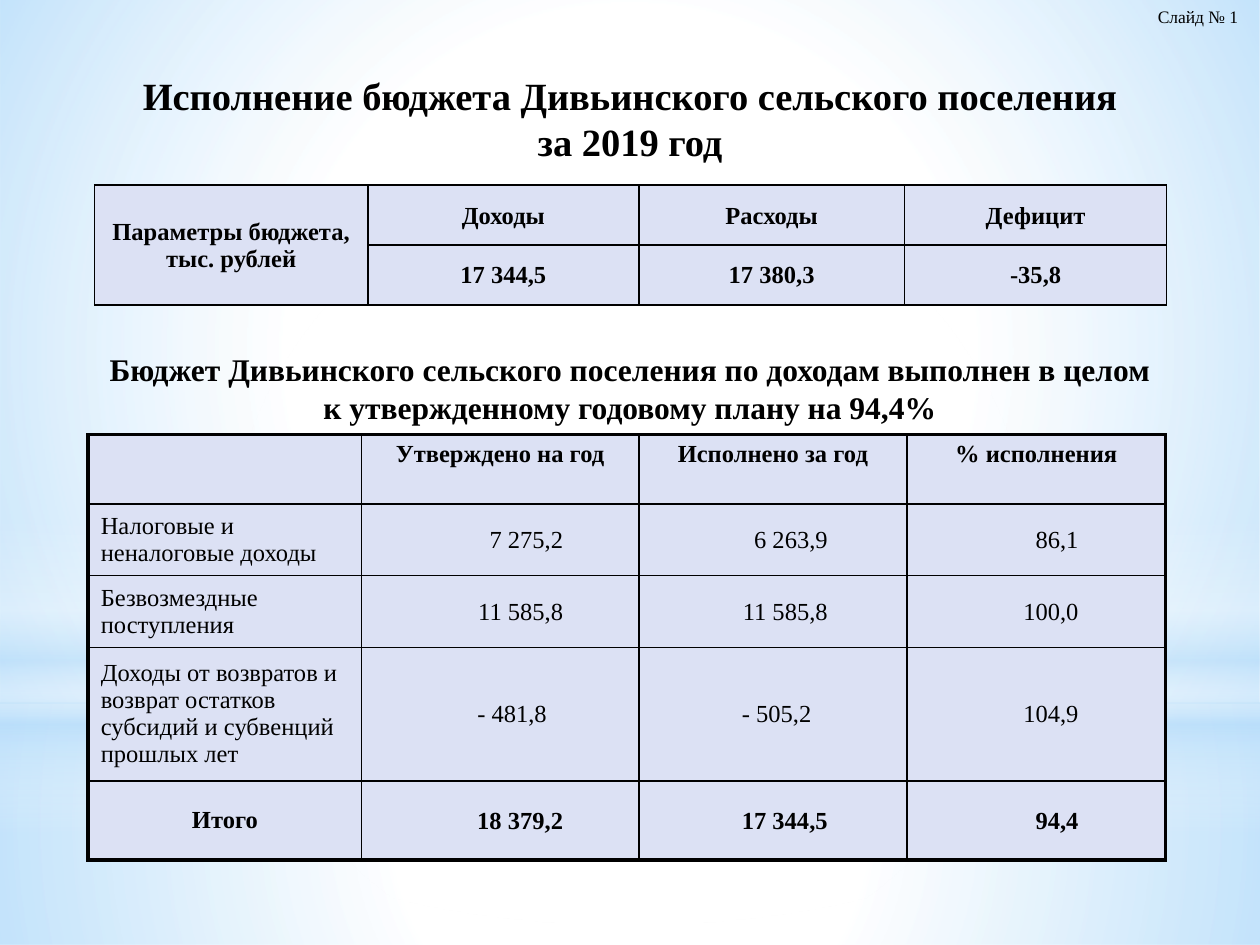
from pptx import Presentation
from pptx.dml.color import RGBColor
from pptx.enum.shapes import MSO_SHAPE
from pptx.enum.text import MSO_ANCHOR, PP_ALIGN
from pptx.oxml import parse_xml
from pptx.oxml.ns import nsdecls
from pptx.util import Inches, Pt

BLACK = RGBColor(0x00, 0x00, 0x00)
CELL_FILL = RGBColor(0xDC, 0xE1, 0xF4)
WHITE = RGBColor(0xFF, 0xFF, 0xFF)
SKY = RGBColor(0xB4, 0xDC, 0xFA)
FONT = "Times New Roman"
THIN, THICK = 1, 2.25
TIGHT = {"margin_left": 0.01, "margin_right": 0.01, "margin_top": 0.01, "margin_bottom": 0}

RADIAL = '<a:path path="circle"><a:fillToRect l="50000" t="50000" r="50000" b="50000"/></a:path>'
VERTICAL = '<a:lin ang="5400000" scaled="0"/>'

# Preset, place, direction, stops of (position, colour, opacity), both in percent
BACKDROP = [
    (MSO_SHAPE.RECTANGLE, (0, 5.58, 10, 1.92), RADIAL,
     [(0, WHITE, 91), (37, WHITE, 76), (100, SKY, 79)]),
    (MSO_SHAPE.RECTANGLE, (0, 0, 10, 5.58), RADIAL,
     [(0, WHITE, 89), (48, WHITE, 62), (100, SKY, 79)]),
    (MSO_SHAPE.RECTANGLE, (0, 4.12, 10, 2.5), VERTICAL,
     [(0, WHITE, 0), (29, WHITE, 30), (45, SKY, 40), (55, WHITE, 26), (65, SKY, 60),
      (100, WHITE, 0)]),
    (MSO_SHAPE.OVAL, (0, 1.75, 10, 5.58), RADIAL, [(0, WHITE, 100), (56, WHITE, 0)]),
]

TOTALS = [("Доходы", "17 344,5"), ("Расходы", "17 380,3"), ("Дефицит", "-35,8")]
INCOME = [
    ("", "Утверждено на год", "Исполнено за год", "% исполнения"),
    ("Налоговые и неналоговые доходы", "7 275,2", "6 263,9", "86,1"),
    ("Безвозмездные поступления", "11 585,8", "11 585,8", "100,0"),
    ("Доходы от возвратов и возврат остатков субсидий и субвенций прошлых лет",
     "- 481,8", "- 505,2", "104,9"),
    ("Итого", "18 379,2", "17 344,5", "94,4"),
]
NUMBER_MARGINS = (0.6, 0.63, 0.69)
NEGATIVE_SHIFT = 0.13


def add_backdrop(page, preset, place, direction, stops):
    shape = page.shapes.add_shape(preset, *map(Inches, place))
    shape.shadow.inherit = False
    shape.line.fill.background()
    marks = "".join(
        f'<a:gs pos="{position * 1000}"><a:srgbClr val="{color}">'
        f'<a:alpha val="{opacity * 1000}"/></a:srgbClr></a:gs>'
        for position, color, opacity in stops)
    gradient = f'<a:gradFill {nsdecls("a")}><a:gsLst>{marks}</a:gsLst>{direction}</a:gradFill>'
    shape.element.spPr.insert(2, parse_xml(gradient))


def write(frame, text, size, bold=False, align=PP_ALIGN.CENTER):
    frame.word_wrap = True
    frame.text = text
    para = frame.paragraphs[0]
    para.alignment = align
    values = {"name": FONT, "size": Pt(size), "bold": bold}
    for span in para.runs:
        for name, value in values.items():
            setattr(span.font, name, value)
        span.font.color.rgb = BLACK


def set_title(page, text, place):
    title = page.shapes.title
    title.left, title.top, title.width, title.height = map(Inches, place)
    write(title.text_frame, text, 22, bold=True)
    # The title belongs in front of the backdrop
    page.shapes.element.append(title.element)


def add_text(page, text, place, size, **style):
    box = page.shapes.add_textbox(*map(Inches, place))
    write(box.text_frame, text, size, **style)


def add_table(page, left, top, widths, heights, outer):
    """Add a filled, bordered table whose outside edge is `outer` points wide."""
    table = page.shapes.add_table(
        len(heights), len(widths), Inches(left), Inches(top),
        Inches(sum(widths)), Inches(sum(heights))).table
    for column, width in zip(table.columns, widths):
        column.width = Inches(width)
    for row, height in zip(table.rows, heights):
        row.height = Inches(height)
    last_row, last_column = len(heights) - 1, len(widths) - 1
    for r in range(len(heights)):
        for c in range(len(widths)):
            cell = table.cell(r, c)
            cell.fill.solid()
            cell.fill.fore_color.rgb = CELL_FILL
            edges = {"L": c == 0, "R": c == last_column, "T": r == 0, "B": r == last_row}
            set_borders(cell, {side: outer if outside else THIN
                               for side, outside in edges.items()})
    return table


def set_borders(cell, widths):
    properties = cell._tc.get_or_add_tcPr()
    for index, (side, width) in enumerate(widths.items()):
        properties.insert(index, parse_xml(
            f'<a:ln{side} {nsdecls("a")} w="{Pt(width)}"><a:solidFill>'
            f'<a:srgbClr val="{BLACK}"/></a:solidFill></a:ln{side}>'))


def fill_cell(cell, text, margins=None, anchor=MSO_ANCHOR.MIDDLE, **style):
    for name, value in (margins or {}).items():
        setattr(cell, name, Inches(value))
    cell.vertical_anchor = anchor
    write(cell.text_frame, text, 14, **style)


def add_totals_table(page):
    table = add_table(page, 0.75, 1.47, (2.17, 2.15, 2.11, 2.08), (0.475, 0.475), THIN)
    table.cell(0, 0).merge(table.cell(1, 0))
    fill_cell(table.cell(0, 0), "Параметры бюджета, тыс. рублей", TIGHT, bold=True)
    for c, pair in enumerate(TOTALS, start=1):
        for r, text in enumerate(pair):
            fill_cell(table.cell(r, c), text, TIGHT, bold=True)


def add_income_table(page):
    table = add_table(page, 0.7, 3.45, (2.17, 2.2, 2.13, 2.05),
                      (0.55, 0.56, 0.57, 1.06, 0.63), THICK)
    for c, text in enumerate(INCOME[0]):
        fill_cell(table.cell(0, c), text, anchor=MSO_ANCHOR.TOP, bold=True)
    for r, (label, *numbers) in enumerate(INCOME[1:], start=1):
        total = r == len(INCOME) - 1
        fill_cell(table.cell(r, 0), label, bold=total,
                  align=PP_ALIGN.CENTER if total else PP_ALIGN.LEFT)
        for c, (number, margin) in enumerate(zip(numbers, NUMBER_MARGINS), start=1):
            if number.startswith("-"):
                margin += NEGATIVE_SHIFT
            fill_cell(table.cell(r, c), number, {**TIGHT, "margin_right": margin},
                      bold=total, align=PP_ALIGN.RIGHT)


def main():
    deck = Presentation()
    deck.slide_width, deck.slide_height = Inches(10), Inches(7.5)
    page = deck.slides.add_slide(deck.slide_layouts[5])
    for layer in BACKDROP:
        add_backdrop(page, *layer)
    set_title(page, "Исполнение бюджета Дивьинского сельского поселения\vза 2019 год",
              (0.75, 0.52, 8.5, 0.84))
    add_totals_table(page)
    add_text(page, "Бюджет Дивьинского сельского поселения по доходам выполнен в целом "
             "к утвержденному годовому плану на 94,4%", (0.75, 2.73, 8.5, 0.71), 18, bold=True)
    add_income_table(page)
    add_text(page, "Слайд № 1", (9.09, 0, 0.91, 0.27), 10, align=PP_ALIGN.LEFT)
    deck.save("out.pptx")


if __name__ == "__main__":
    main()
